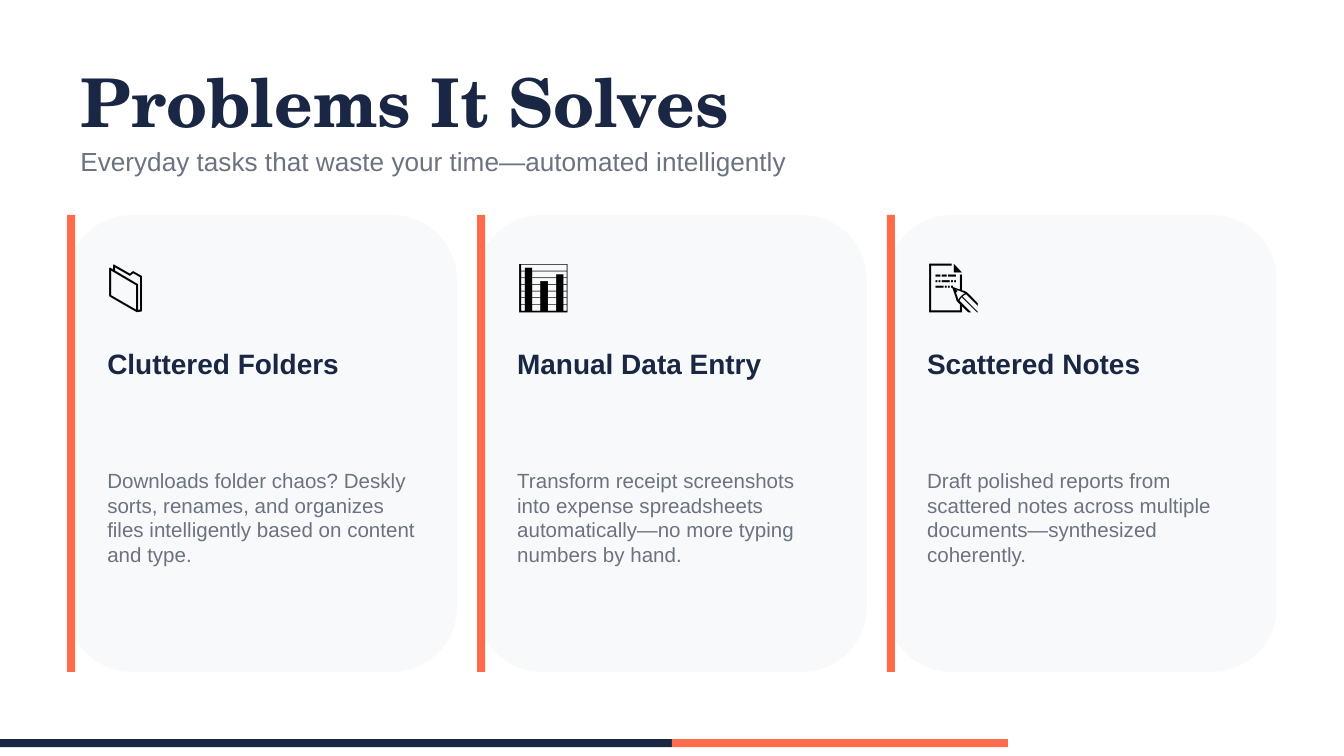
import pptx
import pptx.dml.color
import pptx.enum.shapes
import pptx.enum.text
import pptx.util

NAVY, CORAL, GRAY, PALE = "1A2744", "FF6B4A", "6B7280", "F8F9FA"
SCALE = 4572  # EMU per px, 200 px to the inch


def px(length):
    return pptx.util.Emu(length * SCALE)


def color(hex_value):
    return pptx.dml.color.RGBColor.from_string(hex_value)


def write(frame, text, *, size, fill=GRAY, font="Arial", bold=False):
    """Put one left-aligned, vertically centred paragraph in a text frame."""
    frame.word_wrap = True
    frame.auto_size = pptx.enum.text.MSO_AUTO_SIZE.NONE
    frame.vertical_anchor = pptx.enum.text.MSO_ANCHOR.MIDDLE
    paragraph = frame.paragraphs[0]
    paragraph.alignment = pptx.enum.text.PP_ALIGN.LEFT
    run = paragraph.add_run()
    run.text = text
    run.font.size = pptx.util.Pt(size)
    run.font.name = font
    run.font.bold = bold
    run.font.color.rgb = color(fill)


class Deck:
    ROUNDED = pptx.enum.shapes.MSO_SHAPE.ROUNDED_RECTANGLE
    BAR = pptx.enum.shapes.MSO_SHAPE.RECTANGLE

    def __init__(self, width, height):
        self.presentation = pptx.Presentation()
        self.presentation.slide_width = px(width)
        self.presentation.slide_height = px(height)
        title_only = self.presentation.slide_layouts[5]
        self.slide = self.presentation.slides.add_slide(title_only)

    def title(self, text, left, top, width, height):
        heading = self.slide.shapes.title
        heading.left, heading.top = px(left), px(top)
        heading.width, heading.height = px(width), px(height)
        write(heading.text_frame, text, size=36, fill=NAVY,
              font="TeX Gyre Schola", bold=True)

    def text(self, text, left, top, width, height, **style):
        box = self.slide.shapes.add_textbox(
            px(left), px(top), px(width), px(height))
        write(box.text_frame, text, **style)

    def block(self, kind, fill, left, top, width, height):
        block = self.slide.shapes.add_shape(
            kind, px(left), px(top), px(width), px(height))
        block.shadow.inherit = False
        block.fill.solid()
        block.fill.fore_color.rgb = color(fill)
        block.line.fill.background()

    def card(self, left, icon, heading, detail):
        top, height, inner = 320, 680, left + 40
        self.block(self.ROUNDED, PALE, left, top, 580, height)
        self.block(self.BAR, CORAL, left, top, 12, height)
        self.text(icon, inner, 360, 120, 120, size=28, fill="000000",
                  font="Calibri")
        self.text(heading, inner, 500, 500, 80, size=15, fill=NAVY, bold=True)
        self.text(detail, inner, 590, 500, 360, size=11)


def main():
    deck = Deck(2000, 1125)

    # Heading
    deck.title("Problems It Solves", 100, 80, 1800, 140)
    deck.text("Everyday tasks that waste your time—automated intelligently",
              100, 200, 1800, 80, size=14)

    # Problem cards
    problems = [
        ("📁", "Cluttered Folders",
         "Downloads folder chaos? Deskly sorts, renames, and organizes "
         "files intelligently based on content and type."),
        ("📊", "Manual Data Entry",
         "Transform receipt screenshots into expense spreadsheets "
         "automatically—no more typing numbers by hand."),
        ("📝", "Scattered Notes",
         "Draft polished reports from scattered notes across multiple "
         "documents—synthesized coherently."),
    ]
    for index, problem in enumerate(problems):
        deck.card(100 + index * 610, *problem)

    # Footer stripe
    deck.block(deck.BAR, NAVY, 0, 1100, 1000, 12)
    deck.block(deck.BAR, CORAL, 1000, 1100, 500, 12)

    deck.presentation.save("out.pptx")


if __name__ == "__main__":
    main()
